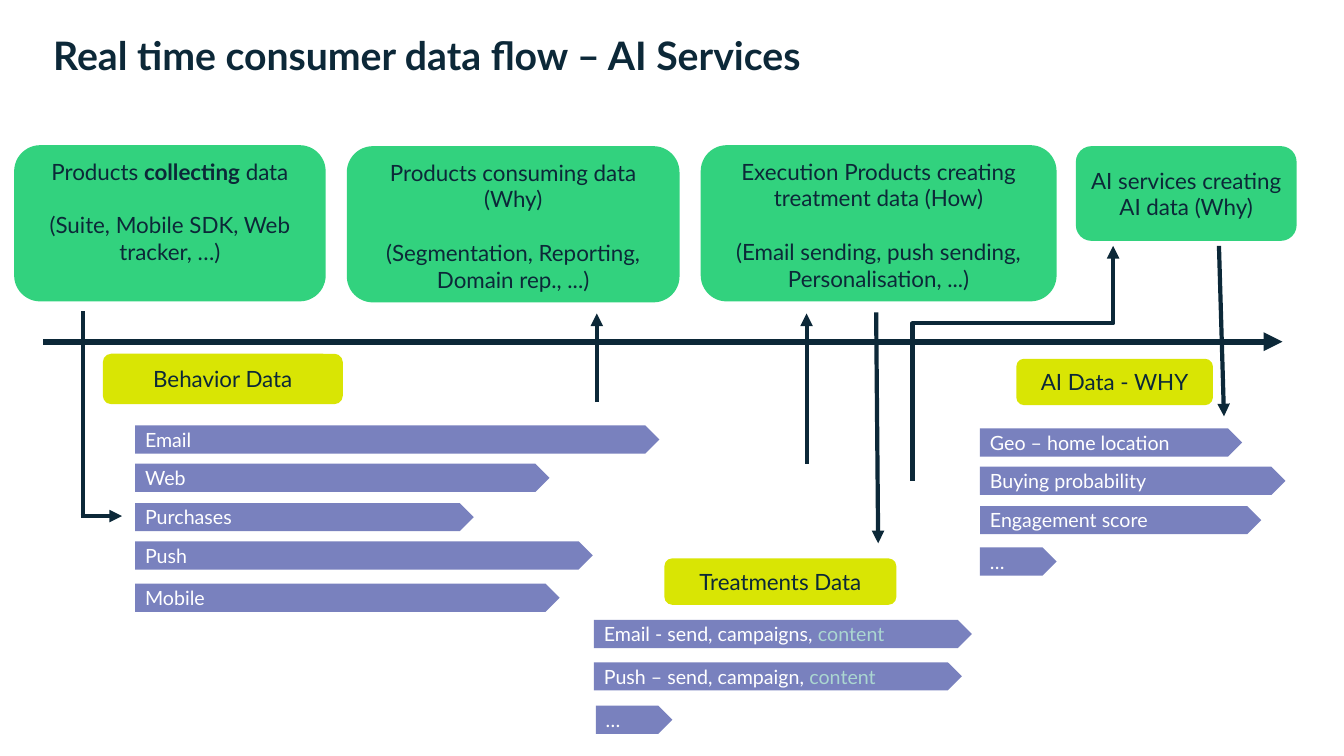
import pptx
import pptx.util
import pptx.dml.color
import pptx.enum.shapes
import pptx.enum.text
import pptx.oxml.ns
from lxml import etree

Inches = pptx.util.Inches
Pt = pptx.util.Pt
SHAPE = pptx.enum.shapes.MSO_SHAPE
LINE = pptx.enum.shapes.MSO_CONNECTOR
ANCHOR = pptx.enum.text.MSO_ANCHOR
ALIGN = pptx.enum.text.PP_ALIGN
qn = pptx.oxml.ns.qn

COLORS = {"ink": "0C2838", "green": "32D27E", "lime": "D9E504",
          "violet": "7981BE", "white": "FFFFFF", "mint": "ABD7D1"}
FONT = "Lato"
TITLE = "Real time consumer data flow – AI Services"

PRODUCTS = [
    (0.14, 1.44, 3.09, 1.55, ANCHOR.TOP,
     [["Products ", ("collecting", {"bold": True}), " data"],
      ["(Suite, Mobile SDK, Web tracker, …)"]]),
    (3.44, 1.45, 3.3, 1.55, ANCHOR.TOP,
     [["Products consuming data (Why)"],
      ["(Segmentation, Reporting, Domain rep., ...)"]]),
    (6.95, 1.44, 3.53, 1.55, ANCHOR.TOP,
     [["Execution Products creating treatment data (How)"],
      ["(Email sending, push sending, Personalisation, ...)"]]),
    (10.67, 1.45, 2.19, 0.94, ANCHOR.MIDDLE,
     [["AI services creating AI data (Why)"]]),
]
LABELS = [
    (1.02, 3.51, 2.38, 0.5, "Behavior Data"),
    (10.08, 3.56, 1.95, 0.46, "AI Data - WHY"),
    (6.59, 5.54, 2.3, 0.46, "Treatments Data"),
]
CONTENT = ("content", {"color": "mint"})
BAR_HEIGHT = 0.28
BARS = [
    (1.34, 4.22, 5.2, ["Email"]),
    (1.34, 4.6, 4.11, ["Web"]),
    (1.34, 4.99, 3.36, ["Purchases"]),
    (1.34, 5.37, 4.54, ["Push"]),
    (1.34, 5.79, 4.21, ["Mobile"]),
    (9.72, 4.25, 2.6, ["Geo – home location"]),
    (9.72, 4.63, 3.03, ["Buying probability"]),
    (9.72, 5.02, 2.79, ["Engagement score"]),
    (9.72, 5.43, 0.76, ["…"]),
    (5.89, 6.15, 3.75, ["Email - send, campaigns, ", CONTENT]),
    (5.89, 6.57, 3.65, ["Push – send, campaign, ", CONTENT]),
    (5.91, 7, 0.76, ["…"]),
]
TIMELINE = (0.43, 3.39, 12.72, 3.39)
FLOWS = [
    (12.09, 2.44, 12.14, 4.13, True),
    (8.69, 3.1, 8.71, 5.39, True),
    (5.92, 3.99, 5.92, 3.11, True),
    (8, 4.6, 8, 3.11, True),
    (0.82, 3.09, 0.82, 5.13, False),
    (0.8, 5.12, 1.21, 5.12, True),
]
AI_FLOW = (9.05, 4.77, 11.04, 2.44)
AI_FLOW_BEND = 0.67


def rgb(name):
    return pptx.dml.color.RGBColor.from_string(COLORS[name])


def write(s, paragraphs, size=16, color="ink", bold=False,
          align=ALIGN.CENTER, anchor=ANCHOR.MIDDLE):
    tf = s.text_frame
    tf.word_wrap = True
    tf.vertical_anchor = anchor
    for i, pieces in enumerate(paragraphs):
        p = tf.add_paragraph() if i else tf.paragraphs[0]
        p.alignment = align
        if i:
            p.space_before = Pt(size * 1.2)
        for piece in pieces:
            text, change = (piece, {}) if isinstance(piece, str) else piece
            r = p.add_run()
            r.text = text
            r.font.name = FONT
            r.font.size = Pt(size)
            r.font.bold = change.get("bold", bold)
            r.font.color.rgb = rgb(change.get("color", color))


def add_box(kind, x, y, w, h, fill):
    s = slide.shapes.add_shape(kind, Inches(x), Inches(y), Inches(w), Inches(h))
    s.shadow.inherit = False
    s.fill.solid()
    s.fill.fore_color.rgb = rgb(fill)
    s.line.fill.background()
    return s


def add_line(x1, y1, x2, y2, width=3, arrow=True, kind=LINE.STRAIGHT):
    s = slide.shapes.add_connector(kind, Inches(x1), Inches(y1), Inches(x2), Inches(y2))
    s.line.width = Pt(width)
    s.line.color.rgb = rgb("ink")
    if arrow:
        etree.SubElement(s.line._get_or_add_ln(), qn("a:tailEnd"), type="triangle")
    etree.SubElement(s._element.spPr, qn("a:effectLst"))
    return s


def add_upright_elbow(x1, y1, x2, y2, bend):
    cx, cy = (x1 + x2) / 2, (y1 + y2) / 2
    dx, dy = (y1 - y2) / 2, (x2 - x1) / 2
    s = add_line(cx + dx, cy + dy, cx - dx, cy - dy, kind=LINE.ELBOW)
    spPr = s._element.spPr
    spPr.find(qn("a:xfrm")).set("rot", str(90 * 60000))
    guides = spPr.find(qn("a:prstGeom")).find(qn("a:avLst"))
    etree.SubElement(guides, qn("a:gd"), name="adj1", fmla=f"val {round(bend * 100000)}")


prs = pptx.Presentation()
prs.slide_width, prs.slide_height = Inches(13.33), Inches(7.5)
slide = prs.slides.add_slide(prs.slide_layouts[6])

title = slide.shapes.add_textbox(Inches(0.43), Inches(0.26), Inches(12.53), Inches(0.57))
write(title, [[TITLE]], size=28, bold=True, align=ALIGN.LEFT, anchor=ANCHOR.TOP)

for x, y, w, h, anchor, paragraphs in PRODUCTS:
    write(add_box(SHAPE.ROUNDED_RECTANGLE, x, y, w, h, "green"), paragraphs, anchor=anchor)

add_line(*TIMELINE, width=4.5)

for x, y, w, h, text in LABELS:
    write(add_box(SHAPE.ROUNDED_RECTANGLE, x, y, w, h, "lime"), [[text]])

for x, y, w, pieces in BARS:
    s = add_box(SHAPE.PENTAGON, x, y, w, BAR_HEIGHT, "violet")
    write(s, [pieces], size=14, color="white", align=ALIGN.LEFT)

for x1, y1, x2, y2, arrow in FLOWS:
    add_line(x1, y1, x2, y2, arrow=arrow)

add_upright_elbow(*AI_FLOW, AI_FLOW_BEND)

prs.save("out.pptx")
